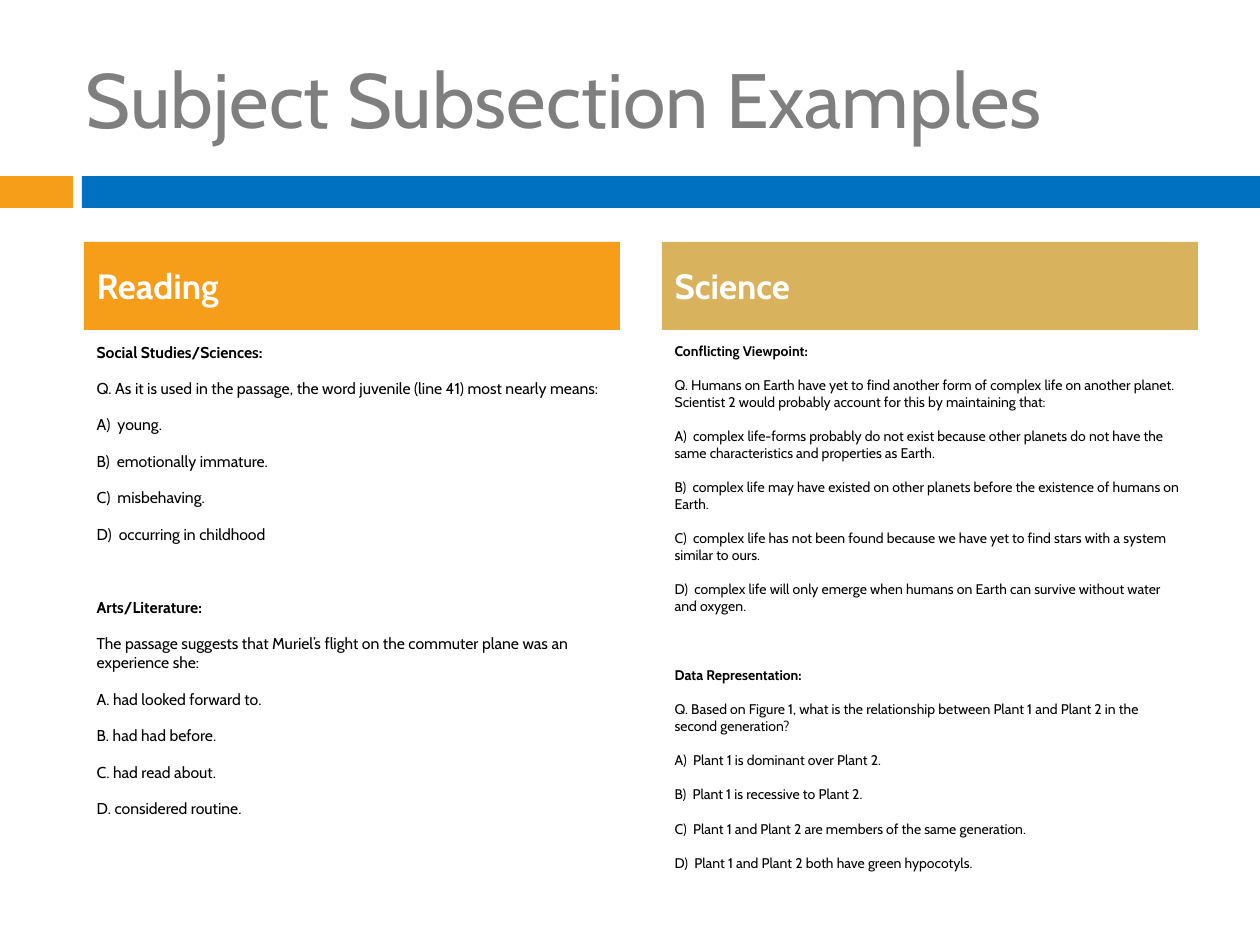
from dataclasses import dataclass

from lxml.etree import SubElement
from pptx import Presentation
from pptx.dml.color import RGBColor
from pptx.enum.shapes import MSO_SHAPE as Shape
from pptx.enum.text import MSO_ANCHOR as Anchor, MSO_AUTO_SIZE as AutoSize, PP_ALIGN as Align
from pptx.oxml.ns import qn
from pptx.util import Emu, Pt


@dataclass(frozen=True)
class Theme:
    font: str = "Cabin"
    grey: str = "7F7F7F"
    orange: str = "F69D1A"
    blue: str = "0070C0"
    sand: str = "D8B25C"
    black: str = "000000"
    white: str = "FFFFFF"
    title_size: int = 44
    heading_size: int = 20
    reading_size: int = 9
    science_size: int = 8
    heading_gap: int = 7
    paragraph_gap: int = 10
    line_height: float = 1.215


THEME = Theme()
TITLE = "Subject Subsection Examples"
COLUMNS = [
    {
        "heading": "Reading",
        "fill": THEME.orange,
        "size": THEME.reading_size,
        "height": 557,
        "sections": [
            ("Social Studies/Sciences:", [
                "Q. As it is used in the passage, the word juvenile (line 41) most nearly means:",
                "A)  young.",
                "B)  emotionally immature.",
                "C)  misbehaving.",
                "D)  occurring in childhood",
            ]),
            ("Arts/Literature:", [
                "The passage suggests that Muriel’s flight on the commuter plane was an experience she:",
                "A. had looked forward to.",
                "B. had had before.",
                "C. had read about.",
                "D. considered routine.",
            ]),
        ],
    },
    {
        "heading": "Science",
        "fill": THEME.sand,
        "size": THEME.science_size,
        "height": 588,
        "sections": [
            ("Conflicting Viewpoint:", [
                "Q. Humans on Earth have yet to find another form of complex life on another planet. "
                "Scientist 2 would probably account for this by maintaining that:",
                "A)  complex life-forms probably do not exist because other planets do not have the "
                "same characteristics and properties as Earth.",
                "B)  complex life may have existed on other planets before the existence of humans on Earth.",
                "C)  complex life has not been found because we have yet to find stars with a system "
                "similar to ours.",
                "D)  complex life will only emerge when humans on Earth can survive without water and oxygen.",
            ]),
            ("Data Representation:", [
                "Q. Based on Figure 1, what is the relationship between Plant 1 and Plant 2 in the "
                "second generation?",
                "A)  Plant 1 is dominant over Plant 2.",
                "B)  Plant 1 is recessive to Plant 2.",
                "C)  Plant 1 and Plant 2 are members of the same generation.",
                "D)  Plant 1 and Plant 2 both have green hypocotyls.",
            ]),
        ],
    },
]

SCALE = 914400 // 126
WIDTH, HEIGHT = 1260, 945
TITLE_BOX = (73, 38, 1124, 120)
BAR_TOP, BAR_HEIGHT = 176, 32
BARS = [(0, 73, THEME.orange), (82, WIDTH - 82, THEME.blue)]
COLUMN_LEFT, COLUMN_WIDTH, COLUMN_STEP = 84, 536, 578
HEADING_TOP, HEADING_HEIGHT, BODY_TOP = 242, 88, 336


def px(value):
    return Emu(value * SCALE)


def apply(target, values):
    for name, value in values.items():
        setattr(target, name, value)


def place(shape, box):
    apply(shape, dict(zip(("left", "top", "width", "height"), map(px, box))))


def paint(shape, color):
    shape.fill.solid()
    shape.fill.fore_color.rgb = RGBColor.from_string(color)
    shape.line.fill.background()


def write(paragraph, text, size, color, bold=False, before=0, after=0):
    apply(paragraph, {"alignment": Align.LEFT, "space_before": Pt(before), "space_after": Pt(after)})
    properties = paragraph._p.get_or_add_pPr()
    properties.set("marL", "0")
    properties.set("indent", "0")
    SubElement(properties, qn("a:buNone"))
    run = paragraph.add_run()
    run.text = text
    apply(run.font, {"name": THEME.font, "size": Pt(size), "bold": bold})
    run.font.color.rgb = RGBColor.from_string(color)


def prepare(shape, box, anchor):
    place(shape, box)
    apply(shape.text_frame, {"auto_size": AutoSize.NONE, "word_wrap": True, "vertical_anchor": anchor})
    return shape.text_frame


def add_bars(slide):
    for left, width, color in BARS:
        bar = slide.shapes.add_shape(Shape.RECTANGLE, px(left), px(BAR_TOP), px(width), px(BAR_HEIGHT))
        bar.shadow.inherit = False
        paint(bar, color)


def fill_body(frame, column):
    size, gap = column["size"], THEME.paragraph_gap
    section_gap = round(2 * gap + size * THEME.line_height, 1)
    lines = []
    for label, items in column["sections"]:
        lines.append((label, True, gap))
        lines += [(item, False, gap) for item in items[:-1]]
        lines.append((items[-1], False, section_gap))
    for index, (text, bold, after) in enumerate(lines):
        paragraph = frame.add_paragraph() if index else frame.paragraphs[0]
        write(paragraph, text, size, THEME.black, bold, after=after)


def fill_column(heading, body, column, left):
    frame = prepare(heading, (left, HEADING_TOP, COLUMN_WIDTH, HEADING_HEIGHT), Anchor.MIDDLE)
    paint(heading, column["fill"])
    write(frame.paragraphs[0], column["heading"], THEME.heading_size, THEME.white, True,
          before=THEME.heading_gap)
    fill_body(prepare(body, (left, BODY_TOP, COLUMN_WIDTH, column["height"]), Anchor.TOP), column)


def main():
    presentation = Presentation()
    apply(presentation, {"slide_width": px(WIDTH), "slide_height": px(HEIGHT)})
    slide = presentation.slides.add_slide(presentation.slide_layouts.get_by_name("Comparison"))
    add_bars(slide)
    title, *holders = slide.placeholders
    frame = prepare(title, TITLE_BOX, Anchor.MIDDLE)
    write(frame.paragraphs[0], TITLE, THEME.title_size, THEME.grey)
    for index, (heading, body, column) in enumerate(zip(holders[::2], holders[1::2], COLUMNS)):
        fill_column(heading, body, column, COLUMN_LEFT + index * COLUMN_STEP)
    presentation.save("out.pptx")


if __name__ == "__main__":
    main()
